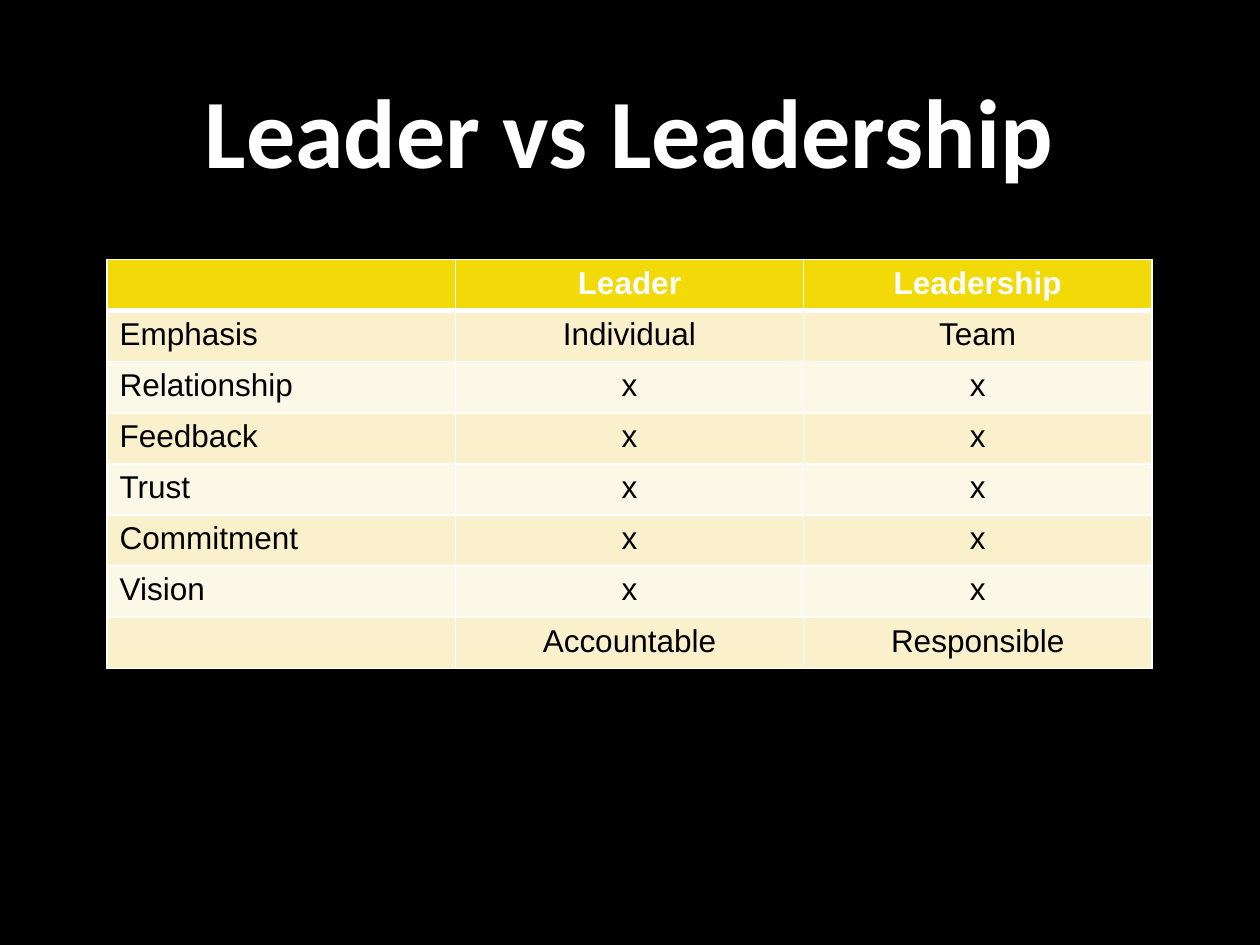
from lxml import etree
from pptx import Presentation
from pptx import util as u
from pptx.dml.color import RGBColor
from pptx.enum import text
from pptx.oxml import ns

LEFT, WIDTH = 61.2, 597
ROWS = [
    ("", "Leader", "Leadership"),
    ("Emphasis", "Individual", "Team"),
    *((name, "x", "x") for name in
      ("Relationship", "Feedback", "Trust", "Commitment", "Vision")),
    ("", "Accountable", "Responsible"),
]


def paint(fill, tone):
    fill.solid()
    fill.fore_color.rgb = RGBColor.from_string(tone)


def write(para, words, face, size, tone, bold, align):
    para.alignment = align
    run = para.add_run()
    run.text = words
    run.font.name = face
    run.font.size = u.Pt(size)
    run.font.bold = bold
    paint(run.font.fill, tone)


def edge(cell, side, width, tone):
    props = cell._tc.get_or_add_tcPr()
    line = etree.SubElement(props, ns.qn("a:ln" + side), w=str(u.Pt(width)))
    fill = etree.SubElement(line, ns.qn("a:solidFill"))
    etree.SubElement(fill, ns.qn("a:srgbClr"), val=tone)


def add_title(slide, words):
    box = slide.shapes.add_textbox(u.Pt(LEFT), u.Pt(8.64), u.Pt(WIDTH), u.Pt(130.3))
    frame = box.text_frame
    frame.word_wrap = True
    frame.vertical_anchor = text.MSO_ANCHOR.MIDDLE
    write(frame.paragraphs[0], words, "Calibri", 56, "FFFFFF", True,
          text.PP_ALIGN.CENTER)


def style(cell, row, col, words):
    head = row == 0
    for side in "LRTB":
        thick = (row, side) in ((0, "B"), (1, "T"))
        edge(cell, side, 3 if thick else 1, "FFFFFF")
    band = "FAF1CC" if row % 2 else "FCF8E7"
    paint(cell.fill, "F2D908" if head else band)
    if words:
        align = text.PP_ALIGN.CENTER if col else text.PP_ALIGN.LEFT
        write(cell.text_frame.paragraphs[0], words, "Arial", 18,
              "FFFFFF" if head else "000000", head, align)


def add_grid(slide, rows):
    high, count = 29.2, len(rows[0])
    grid = slide.shapes.add_table(
        len(rows), count, u.Pt(LEFT), u.Pt(148.3),
        u.Pt(WIDTH), u.Pt(high * len(rows))).table
    for col in grid.columns:
        col.width = u.Pt(WIDTH / count)
    for r, row in enumerate(rows):
        grid.rows[r].height = u.Pt(high)
        for c, words in enumerate(row):
            style(grid.cell(r, c), r, c, words)


def main():
    deck = Presentation()
    deck.slide_width, deck.slide_height = u.Pt(720), u.Pt(540)
    slide = deck.slides.add_slide(deck.slide_layouts[6])
    paint(slide.background.fill, "000000")
    add_title(slide, "Leader vs Leadership")
    add_grid(slide, ROWS)
    deck.save("out.pptx")


if __name__ == "__main__":
    main()
